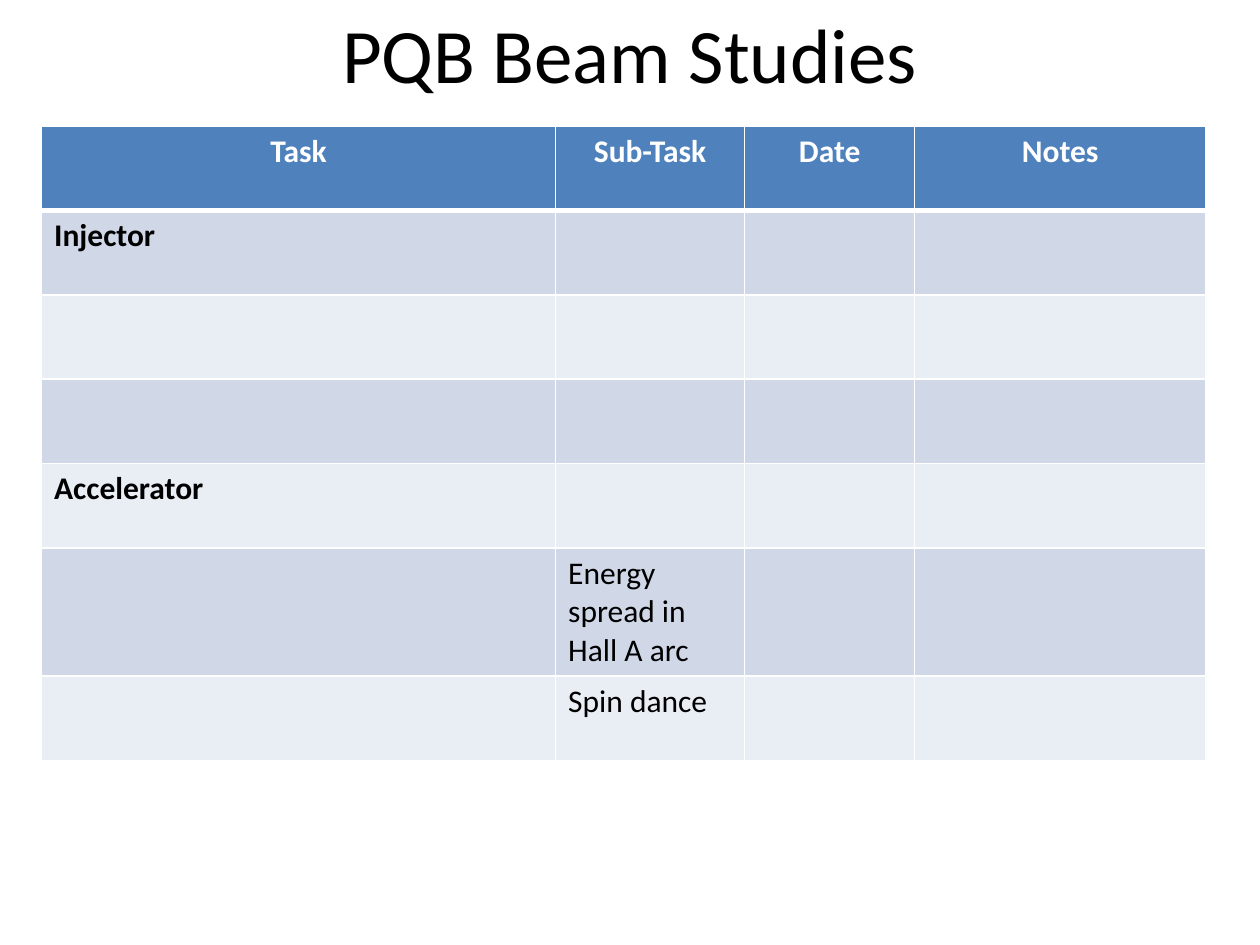
from lxml import etree
from pptx import Presentation
from pptx.dml.color import RGBColor
from pptx.enum.text import MSO_ANCHOR, PP_ALIGN
from pptx.oxml.ns import qn
from pptx.util import Inches, Pt

CENTER = PP_ALIGN.CENTER
LEFT = PP_ALIGN.LEFT
MIDDLE = MSO_ANCHOR.MIDDLE

BLACK = RGBColor(0x00, 0x00, 0x00)
WHITE = RGBColor(0xFF, 0xFF, 0xFF)
HEADER_BLUE = RGBColor(0x4F, 0x81, 0xBD)
BANDS = (RGBColor(0xE9, 0xED, 0xF4), RGBColor(0xD0, 0xD8, 0xE8))

FONT = "Calibri"
COLUMN_WIDTHS = (4.08, 1.5, 1.35, 2.31)
ROW_HEIGHT = 0.67
ROWS = (
    ("Task", "Sub-Task", "Date", "Notes"),
    ("Injector", "", "", ""),
    ("", "", "", ""),
    ("", "", "", ""),
    ("Accelerator", "", "", ""),
    ("", "Energy spread in Hall A arc", "", ""),
    ("", "Spin dance", "", ""),
)


def format_font(font, size, color, bold=False):
    font.name = FONT
    font.size = Pt(size)
    font.bold = bold
    font.color.rgb = color


def add_title(slide, text):
    title = slide.shapes.title
    title.left, title.top = Inches(0.5), Inches(0)
    title.width, title.height = Inches(9), Inches(0.83)
    title.text_frame.vertical_anchor = MIDDLE
    paragraph = title.text_frame.paragraphs[0]
    paragraph.alignment = CENTER
    run = paragraph.add_run()
    run.text = text
    format_font(run.font, 44, BLACK)


def set_borders(cell, widths):
    properties = cell._tc.get_or_add_tcPr()
    for side in ("L", "R", "T", "B"):
        line = etree.SubElement(properties, qn(f"a:ln{side}"), w=str(Pt(widths[side])))
        fill = etree.SubElement(line, qn("a:solidFill"))
        etree.SubElement(fill, qn("a:srgbClr"), val=str(WHITE))


def format_cell(cell, text, row, column):
    header = row == 0
    widths = {"L": 1, "R": 1, "T": 3 if row == 1 else 1, "B": 3 if header else 1}
    set_borders(cell, widths)
    cell.fill.solid()
    cell.fill.fore_color.rgb = HEADER_BLUE if header else BANDS[row % 2]
    paragraph = cell.text_frame.paragraphs[0]
    paragraph.alignment = CENTER if header else LEFT
    if text:
        run = paragraph.add_run()
        run.text = text
        format_font(run.font, 18, WHITE if header else BLACK, header or column == 0)


def add_task_table(slide):
    frame = slide.shapes.add_table(
        len(ROWS), len(COLUMN_WIDTHS), Inches(0.33), Inches(1),
        Inches(sum(COLUMN_WIDTHS)), Inches(ROW_HEIGHT * len(ROWS)),
    )
    table = frame.table
    for column, width in zip(table.columns, COLUMN_WIDTHS):
        column.width = Inches(width)
    for row_index, texts in enumerate(ROWS):
        table.rows[row_index].height = Inches(ROW_HEIGHT)
        for column_index, text in enumerate(texts):
            cell = table.cell(row_index, column_index)
            format_cell(cell, text, row_index, column_index)


def main():
    presentation = Presentation()
    presentation.slide_width = Inches(10)
    presentation.slide_height = Inches(7.5)
    slide = presentation.slides.add_slide(presentation.slide_layouts[5])
    add_title(slide, "PQB Beam Studies")
    add_task_table(slide)
    presentation.save("out.pptx")


if __name__ == "__main__":
    main()
